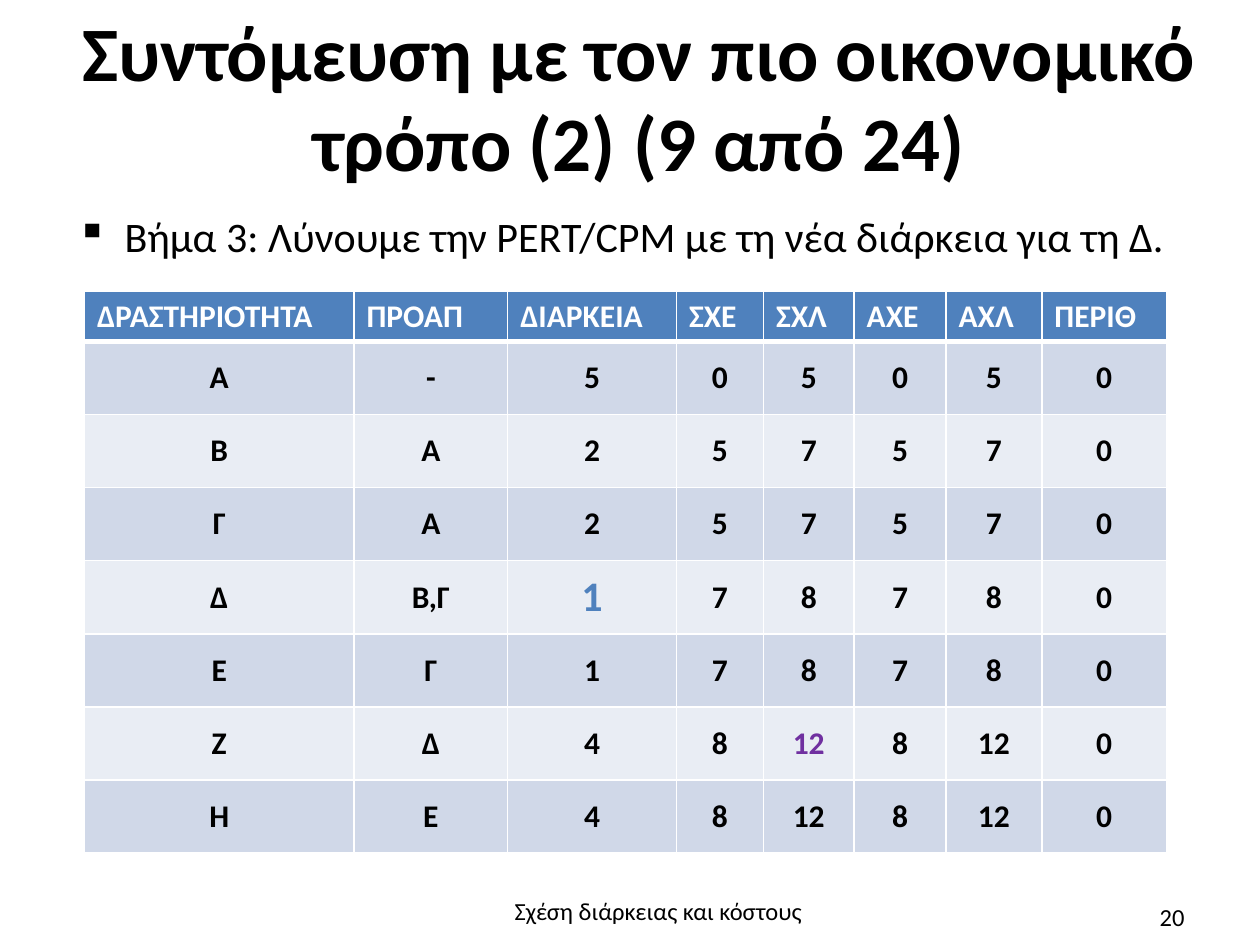
"""Build the PERT/CPM activity table slide."""
from lxml import etree
from pptx import Presentation
from pptx.dml.color import RGBColor
from pptx.enum.text import MSO_ANCHOR, MSO_AUTO_SIZE, PP_ALIGN
from pptx.oxml.ns import qn
from pptx.util import Inches, Pt

LEFT, CENTER, RIGHT = PP_ALIGN.LEFT, PP_ALIGN.CENTER, PP_ALIGN.RIGHT
TOP, MIDDLE = MSO_ANCHOR.TOP, MSO_ANCHOR.MIDDLE
NO_FIT = MSO_AUTO_SIZE.NONE

FONT = "Calibri"
COLORS = {"text": "000000", "white": "FFFFFF", "header": "4F81BD",
          "odd": "D0D8E8", "even": "E9EDF4", "finish": "7030A0"}
TITLE = "Συντόμευση με τον πιο οικονομικό τρόπο (2) (9 από 24)"
STEP = "Βήμα 3: Λύνουμε την PERT/CPM με τη νέα διάρκεια για τη Δ."
FOOTER = "Σχέση διάρκειας και κόστους"
NUMBER = "20"
ROWS = [
    ("ΔΡΑΣΤΗΡΙΟΤΗΤΑ", "ΠΡΟΑΠ", "ΔΙΑΡΚΕΙΑ", "ΣΧΕ", "ΣΧΛ", "ΑΧΕ", "ΑΧΛ", "ΠΕΡΙΘ"),
    ("Α", "-", "5", "0", "5", "0", "5", "0"),
    ("Β", "Α", "2", "5", "7", "5", "7", "0"),
    ("Γ", "Α", "2", "5", "7", "5", "7", "0"),
    ("Δ", "Β,Γ", "1", "7", "8", "7", "8", "0"),
    ("Ε", "Γ", "1", "7", "8", "7", "8", "0"),
    ("Ζ", "Δ", "4", "8", "12", "8", "12", "0"),
    ("Η", "Ε", "4", "8", "12", "8", "12", "0"),
]
COL_WIDTHS = [2.14, 1.22, 1.34, 0.69, 0.72, 0.73, 0.76, 0.99]
HEADER_HEIGHT, ROW_HEIGHT = 0.38, 0.58
HIGHLIGHTS = {(4, 2): (24, "header"), (6, 4): (18, "finish")}


def write(tf, text, size, color="text", align=LEFT, bold=False):
    tf.text = text
    p = tf.paragraphs[0]
    p.alignment = align
    font = p.runs[0].font
    font.name, font.size, font.bold = FONT, Pt(size), bold
    font.color.rgb = RGBColor.from_string(COLORS[color])
    return p


def add_text(slide, box, text, size, align=LEFT):
    tf = slide.shapes.add_textbox(*map(Inches, box)).text_frame
    tf.word_wrap = True
    return write(tf, text, size, align=align)


def add_bullet(p, char, indent):
    pPr = p._p.get_or_add_pPr()
    pPr.set("marL", str(Inches(indent)))
    pPr.set("indent", str(-Inches(indent)))
    etree.SubElement(pPr, qn("a:buChar")).set("char", char)


def set_borders(cell, bottom):
    tcPr = cell._tc.get_or_add_tcPr()
    widths = {"lnL": 1, "lnR": 1, "lnT": 1, "lnB": bottom}
    for i, (side, width) in enumerate(widths.items()):
        ln = etree.Element(qn(f"a:{side}"), w=str(Pt(width)))
        fill = etree.SubElement(ln, qn("a:solidFill"))
        etree.SubElement(fill, qn("a:srgbClr")).set("val", COLORS["white"])
        tcPr.insert(i, ln)


def add_activities(slide):
    heights = [HEADER_HEIGHT] + [ROW_HEIGHT] * (len(ROWS) - 1)
    box = (0.67, 2.31, sum(COL_WIDTHS), sum(heights))
    table = slide.shapes.add_table(len(ROWS), len(COL_WIDTHS), *map(Inches, box)).table
    for column, width in zip(table.columns, COL_WIDTHS):
        column.width = Inches(width)
    for r, (values, height) in enumerate(zip(ROWS, heights)):
        table.rows[r].height = Inches(height)
        header = r == 0
        band = "header" if header else "odd" if r % 2 else "even"
        for c, value in enumerate(values):
            cell = table.cell(r, c)
            size, color = HIGHLIGHTS.get((r, c), (18, "white" if header else "text"))
            write(cell.text_frame, value, size, color, LEFT if header else CENTER, True)
            cell.vertical_anchor = TOP if header else MIDDLE
            cell.fill.solid()
            cell.fill.fore_color.rgb = RGBColor.from_string(COLORS[band])
            set_borders(cell, 3 if header else 1)
            if r == 1:
                cell._tc.tcPr.find(qn("a:lnT")).set("w", str(Pt(3)))


def main():
    prs = Presentation()
    prs.slide_width, prs.slide_height = Inches(10), Inches(7.5)
    slide = prs.slides.add_slide(prs.slide_layouts[5])

    title = slide.shapes.title
    title.left, title.top, title.width, title.height = map(Inches, (0.51, 0.09, 9.13, 1.38))
    tf = title.text_frame
    tf.auto_size, tf.word_wrap, tf.vertical_anchor = NO_FIT, True, MIDDLE
    tf.margin_left = tf.margin_right = tf.margin_bottom = 0
    tf.margin_top = Inches(0.02)
    write(tf, TITLE, 44, align=CENTER, bold=True).line_spacing = 0.98

    add_bullet(add_text(slide, (0.51, 1.62, 8.99, 0.5), STEP, 24), "▪", 0.38)
    add_activities(slide)
    add_text(slide, (3.48, 7.06, 3.49, 0.55), FOOTER, 14, CENTER)
    add_text(slide, (7.17, 7.11, 2.33, 0.4), NUMBER, 14, RIGHT)
    prs.save("out.pptx")


if __name__ == "__main__":
    main()
